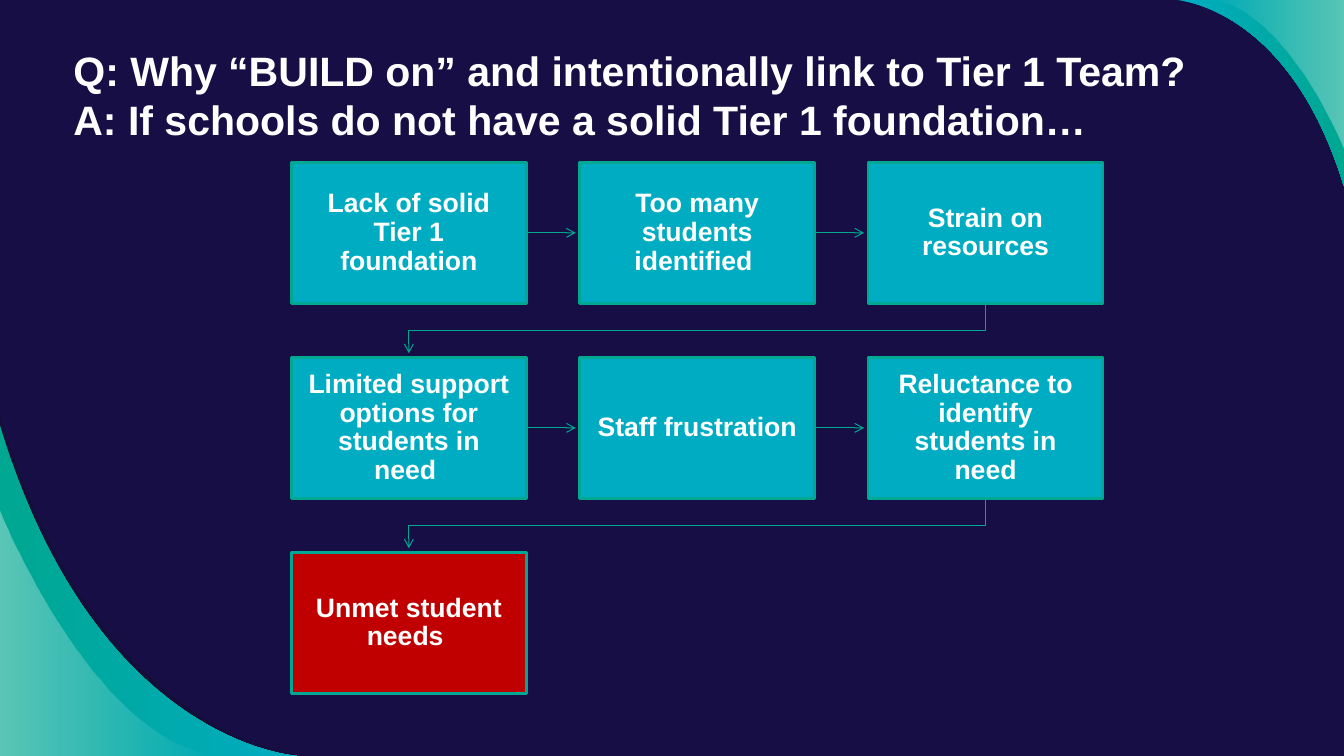
from dataclasses import dataclass

import lxml.etree
import pptx
import pptx.dml.color
import pptx.enum.shapes
import pptx.enum.text
import pptx.oxml.ns
import pptx.util

Inches = pptx.util.Inches
Pt = pptx.util.Pt
qn = pptx.oxml.ns.qn
Align = pptx.enum.text.PP_ALIGN
Point = tuple[float, float]

NAVY, TEAL, GREEN, RED, WHITE = "160E44", "00ACC2", "00A791", "C00000", "FFFFFF"
COLUMNS = 3
LEFT, TOP, LAST_TOP = 2.89, 1.61, 5.48
BOX_WIDTH, BOX_HEIGHT = 2.33, 1.4
COLUMN_STEP, ROW_STEP = 2.86, (LAST_TOP - TOP) / 2
ARROW_GAP = 0.04


@dataclass(frozen=True)
class Swoosh:
    """A page corner closed off by one cubic curve; stops run left to right."""
    curve: tuple[Point, Point, Point, Point]
    corner: Point
    stops: tuple[str, ...]
    alphas: tuple[int, ...]


@dataclass(frozen=True)
class Step:
    text: str
    fill: str = TEAL


SWOOSHES = [
    Swoosh(((0, 4.13), (0.98, 7.39), (3.03, 7.5), (3.03, 7.5)), (0, 7.5), ("12102F",), (54,)),
    Swoosh(((2.95, 7.5), (2.95, 7.5), (0.95, 7.39), (0, 4.22)), (0, 7.5), (GREEN, TEAL), (100, 100)),
    Swoosh(((0, 5.06), (0, 5.06), (0.91, 7.35), (2.16, 7.5)), (0, 7.5), (WHITE, WHITE), (36, 0)),
    Swoosh(((11.67, 0), (11.67, 0), (12.79, 0.06), (13.33, 1.85)), (13.33, 0), (TEAL, GREEN), (100, 100)),
    Swoosh(((13.33, 1.49), (13.33, 1.49), (12.77, 0.09), (12.01, 0)), (13.33, 0), (WHITE, WHITE), (0, 36)),
]

STEPS = [
    Step("Lack of solid Tier 1 foundation"),
    Step("Too many students identified "),
    Step("Strain on resources"),
    Step("Limited support options for students in need "),
    Step("Staff frustration"),
    Step("Reluctance to identify students in need"),
    Step("Unmet student needs ", RED),
]

TITLE = [
    "Q: Why “BUILD on” and intentionally link to Tier 1 Team?",
    "A: If schools do not have a solid Tier 1 foundation…",
]


def color(value: str) -> pptx.dml.color.RGBColor:
    return pptx.dml.color.RGBColor.from_string(value)


def write(frame, lines: list[str], *, size: float, align=Align.LEFT, inset: Point = (0.1, 0.05),
          spacing: float = 1.0) -> None:
    frame.word_wrap = True
    frame.vertical_anchor = pptx.enum.text.MSO_ANCHOR.MIDDLE
    frame.margin_left = frame.margin_right = Inches(inset[0])
    frame.margin_top = frame.margin_bottom = Inches(inset[1])
    for index, line in enumerate(lines):
        para = frame.add_paragraph() if index else frame.paragraphs[0]
        para.alignment = align
        para.line_spacing = spacing
        span = para.add_run()
        span.text = line
        span.font.name = "Arial"
        span.font.size = Pt(size)
        span.font.bold = True
        span.font.color.rgb = color(WHITE)


def polyline(page, points: list[Point], *, close: bool):
    corners = [(Inches(x), Inches(y)) for x, y in points]
    builder = page.shapes.build_freeform(*corners[0])
    builder.add_line_segments(corners[1:], close=close)
    shape = builder.convert_to_shape()
    shape.shadow.inherit = False
    return shape


def bend_first_lines(shape) -> None:
    """Turn the first three line segments into one cubic curve."""
    segments = list(shape.element.spPr.iter(qn("a:lnTo")))[:3]
    curve = lxml.etree.Element(qn("a:cubicBezTo"))
    segments[0].addprevious(curve)
    for segment in segments:
        curve.append(segment[0])
        segment.getparent().remove(segment)


def draw_swoosh(page, swoosh: Swoosh) -> None:
    shape = polyline(page, [*swoosh.curve, swoosh.corner], close=True)
    bend_first_lines(shape)
    if len(swoosh.stops) == 1:
        shape.fill.solid()
        shape.fill.fore_color.rgb = color(swoosh.stops[0])
    else:
        shape.fill.gradient()
        shape.fill.gradient_angle = 0
        for stop, value in zip(shape.fill.gradient_stops, swoosh.stops):
            stop.color.rgb = color(value)
    for element, alpha in zip(shape.element.spPr.iter(qn("a:srgbClr")), swoosh.alphas):
        if alpha < 100:
            lxml.etree.SubElement(element, qn("a:alpha"), val=str(alpha * 1000))
    shape.line.fill.background()


def draw_arrow(page, points: list[Point]) -> None:
    if len(points) == 2:
        ends = [Inches(value) for point in points for value in point]
        arrow = page.shapes.add_connector(pptx.enum.shapes.MSO_CONNECTOR.STRAIGHT, *ends)
        lxml.etree.SubElement(arrow.element.spPr, qn("a:effectLst"))
    else:
        arrow = polyline(page, points, close=False)
        arrow.fill.background()
    arrow.line.color.rgb = color(GREEN)
    arrow.line.width = Pt(0.75)
    line = arrow.element.spPr.find(qn("a:ln"))
    lxml.etree.SubElement(line, qn("a:tailEnd"), type="arrow")


def place(index: int) -> Point:
    row, column = divmod(index, COLUMNS)
    return LEFT + column * COLUMN_STEP, TOP + row * ROW_STEP


def arrow_points(index: int) -> list[Point]:
    """Route from one step to the next, bending where the row ends."""
    left, top = place(index)
    next_left, next_top = place(index + 1)
    if next_top == top:
        middle = top + BOX_HEIGHT / 2
        return [(left + BOX_WIDTH, middle), (next_left - ARROW_GAP, middle)]
    start, end = left + BOX_WIDTH / 2, next_left + BOX_WIDTH / 2
    bottom = top + BOX_HEIGHT
    bend = (bottom + next_top) / 2
    return [(start, bottom), (start, bend), (end, bend), (end, next_top - ARROW_GAP)]


def draw_step(page, index: int, step: Step) -> None:
    left, top = place(index)
    box = page.shapes.add_shape(
        pptx.enum.shapes.MSO_SHAPE.RECTANGLE,
        Inches(left), Inches(top), Inches(BOX_WIDTH), Inches(BOX_HEIGHT))
    box.shadow.inherit = False
    box.fill.solid()
    box.fill.fore_color.rgb = color(step.fill)
    box.line.color.rgb = color(GREEN)
    box.line.width = Pt(2)
    write(box.text_frame, [step.text], size=19, align=Align.CENTER, inset=(0.15, 0.15), spacing=0.9)


def main() -> None:
    deck = pptx.Presentation()
    deck.slide_width, deck.slide_height = Inches(13.33), Inches(7.5)
    page = deck.slides.add_slide(deck.slide_layouts[6])
    page.background.fill.solid()
    page.background.fill.fore_color.rgb = color(NAVY)
    for swoosh in SWOOSHES:
        draw_swoosh(page, swoosh)
    for index, step in enumerate(STEPS):
        if index + 1 < len(STEPS):
            draw_arrow(page, arrow_points(index))
        draw_step(page, index, step)
    title = page.shapes.add_textbox(Inches(0.63), Inches(0.39), Inches(11.46), Inches(1.09))
    write(title.text_frame, TITLE, size=29.3)
    deck.save("out.pptx")


if __name__ == "__main__":
    main()
